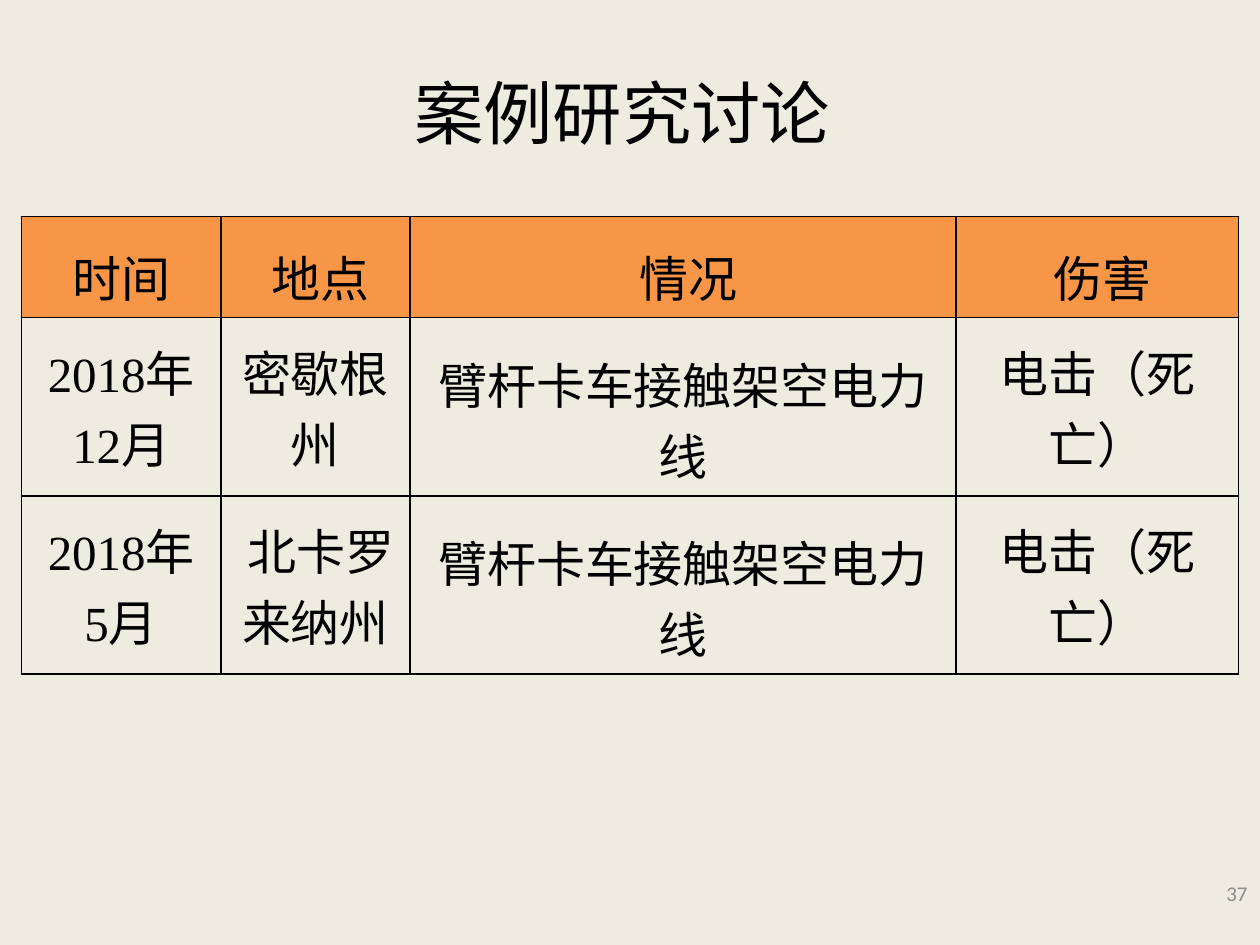
from lxml import etree
from pptx import Presentation
from pptx.dml.color import RGBColor
from pptx.enum import text
from pptx.oxml import ns
from pptx.util import Pt

TITLE = "案例研究讨论"
PAGE_NUMBER = "37"
HEADER = ["时间", " 地点", " 情况", " 伤害"]
CASES = [
    ["2018年\n12月", "密歇根州", "臂杆卡车接触架空电力线", "电击（死亡）"],
    ["2018年\n5月", " 北卡罗来纳州", "臂杆卡车接触架空电力线", "电击（死亡）"],
]
COLUMN_WIDTHS = [114, 108, 312, 161.5]
HEADER_HEIGHT, CASE_HEIGHT = 57.8, 101.8
TABLE_LEFT, TABLE_TOP = 12.25, 123.7
SITUATION_COLUMN = 2

BACKGROUND = RGBColor(0xEE, 0xEC, 0xE1)
ORANGE = RGBColor(0xF7, 0x96, 0x46)
BLACK = RGBColor(0, 0, 0)
GREY = RGBColor(0x8C, 0x8C, 0x8C)
SERIF, SANS = "Times New Roman", "Calibri"


def format_text(frame, align, size, font, color):
    for para in frame.paragraphs:
        para.alignment = align
        for span in para.runs:
            span.font.size = Pt(size)
            span.font.name = font
            span.font.color.rgb = color


def add_text(page, words, place, align, size, font, color):
    box = page.shapes.add_textbox(*map(Pt, place))
    frame = box.text_frame
    frame.word_wrap = True
    frame.vertical_anchor = text.MSO_ANCHOR.MIDDLE
    frame.text = words
    format_text(frame, align, size, font, color)


def add_borders(cell, width, color):
    properties = cell._tc.get_or_add_tcPr()
    for index, side in enumerate(("lnL", "lnR", "lnT", "lnB")):
        line = etree.Element(ns.qn(f"a:{side}"), w=str(Pt(width)))
        fill = etree.SubElement(line, ns.qn("a:solidFill"))
        etree.SubElement(fill, ns.qn("a:srgbClr"), val=str(color))
        properties.insert(index, line)


def fill_cell(cell, words, top_margin, fill_color):
    cell.text = words
    cell.vertical_anchor = text.MSO_ANCHOR.MIDDLE
    cell.margin_left = cell.margin_right = Pt(7.2)
    cell.margin_top, cell.margin_bottom = Pt(top_margin), Pt(3.6)
    if fill_color is None:
        cell.fill.background()
    else:
        cell.fill.solid()
        cell.fill.fore_color.rgb = fill_color
    format_text(cell.text_frame, text.PP_ALIGN.CENTER, 28, SERIF, BLACK)
    add_borders(cell, 1, BLACK)


def add_case_table(page):
    rows = [HEADER] + CASES
    heights = [HEADER_HEIGHT] + [CASE_HEIGHT] * len(CASES)
    table = page.shapes.add_table(
        len(rows), len(HEADER), Pt(TABLE_LEFT), Pt(TABLE_TOP),
        Pt(sum(COLUMN_WIDTHS)), Pt(sum(heights))).table
    for column, width in zip(table.columns, COLUMN_WIDTHS):
        column.width = Pt(width)
    for r, (row, height) in enumerate(zip(rows, heights)):
        table.rows[r].height = Pt(height)
        for c, words in enumerate(row):
            if r == 0:
                top_margin = 13.7
            else:
                top_margin = 17.3 if c == SITUATION_COLUMN else 3.6
            fill_cell(table.cell(r, c), words, top_margin, ORANGE if r == 0 else None)


def main():
    deck = Presentation()
    deck.slide_width, deck.slide_height = Pt(720), Pt(540)
    page = deck.slides.add_slide(deck.slide_layouts[6])
    page.background.fill.solid()
    page.background.fill.fore_color.rgb = BACKGROUND
    add_text(page, TITLE, (31.5, 41.8, 648, 44.6),
             text.PP_ALIGN.CENTER, 39.6, SERIF, BLACK)
    add_text(page, PAGE_NUMBER, (558, 496, 162, 28.8),
             text.PP_ALIGN.RIGHT, 12, SANS, GREY)
    add_case_table(page)
    deck.save("out.pptx")


if __name__ == "__main__":
    main()
